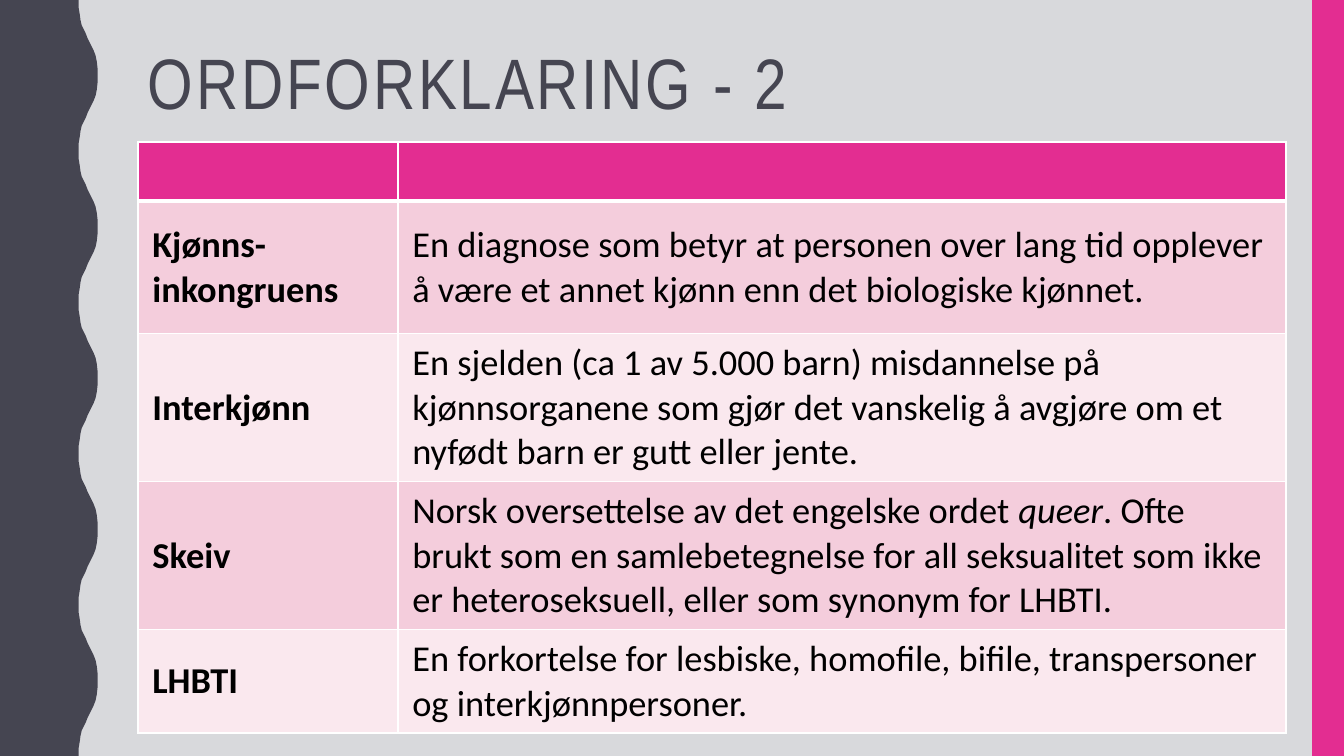
from dataclasses import dataclass

from lxml import etree
from pptx import Presentation, util as u
from pptx.dml.color import RGBColor
from pptx.enum import shapes, text
from pptx.oxml.ns import qn

WIDE, HIGH = 33.87, 19.05
DARK, PINK, GREY = "454551", "E32D91", "D8D9DC"
WHITE, BLACK = "FFFFFF", "000000"
BANDS = ("F4CDDC", "FAE8EE")
SIZE = 26
COLS = (6.55, 22.38)
ROWS = (1.27, 3.35, 3.35, 3.35, 2.34)

# Left half of one wave crest, in hundredths of a cm
RISE = [(198, 0), (198, 18), (201, 36), (203, 51), (206, 64), (211, 74),
        (216, 84), (221, 97), (226, 107), (231, 117), (236, 127),
        (241, 140), (244, 155), (246, 173)]
PERIOD, WAVES = 381, 5

CELL = {"vertical_anchor": text.MSO_ANCHOR.MIDDLE,
        "margin_left": u.Cm(0.36), "margin_right": u.Cm(0.36),
        "margin_top": u.Cm(0.18), "margin_bottom": u.Cm(0.18)}
FRAME = {"word_wrap": True, "vertical_anchor": text.MSO_ANCHOR.TOP}


@dataclass
class Term:
    name: str
    sense: tuple[str, ...]  # every second piece is italic


TERMS = [
    Term("Kjønns-inkongruens",
         ("En diagnose som betyr at personen over lang tid opplever å være "
          "et annet kjønn enn det biologiske kjønnet.",)),
    Term("Interkjønn",
         ("En sjelden (ca 1 av 5.000 barn) misdannelse på kjønnsorganene som "
          "gjør det vanskelig å avgjøre om et nyfødt barn er gutt eller "
          "jente.",)),
    Term("Skeiv",
         ("Norsk oversettelse av det engelske ordet ", "queer",
          ". Ofte brukt som en samlebetegnelse for all seksualitet som ikke "
          "er heteroseksuell, eller som synonym for LHBTI.")),
    Term("LHBTI",
         ("En forkortelse for lesbiske, homofile, bifile, transpersoner og "
          "interkjønnpersoner.",)),
]


def paint(fill, tone: str) -> None:
    fill.solid()
    fill.fore_color.rgb = RGBColor.from_string(tone)


def apply(item, form: dict) -> None:
    for key, value in form.items():
        setattr(item, key, value)


def write(par, words: str, tone: str, **form):
    run = par.add_run()
    run.text = words
    apply(run.font, form)
    run.font.color.rgb = RGBColor.from_string(tone)
    return run


def finish(shape, tone: str) -> None:
    shape.shadow.inherit = False
    paint(shape.fill, tone)
    shape.line.fill.background()


def border(cell, top: int, base: int) -> None:
    props = cell._tc.get_or_add_tcPr()
    sides = {"lnL": 1, "lnR": 1, "lnT": top, "lnB": base}
    for spot, (side, width) in enumerate(sides.items()):
        line = etree.Element(qn(f"a:{side}"), w=str(u.Pt(width)))
        fill = etree.SubElement(line, qn("a:solidFill"))
        etree.SubElement(fill, qn("a:srgbClr"), val=WHITE)
        props.insert(spot, line)


def draw_sides(slide) -> None:
    # Wavy band on the left
    fall = [(x, PERIOD - y) for x, y in reversed(RISE[1:])]
    crest = RISE + [(246, 190)] + fall
    edge = [(x, y + PERIOD * n) for n in range(WAVES) for x, y in crest]
    end = PERIOD * WAVES
    pen = slide.shapes.build_freeform(0, 0, scale=u.Cm(0.01))
    pen.add_line_segments(edge + [(RISE[0][0], end), (0, end)], close=True)
    finish(pen.convert_to_shape(), DARK)

    # Straight band on the right
    bar = slide.shapes.add_shape(shapes.MSO_SHAPE.RECTANGLE, u.Cm(33.07), 0,
                                 u.Cm(0.8), u.Cm(HIGH))
    finish(bar, PINK)


def draw_table(slide) -> None:
    frame = slide.shapes.add_table(
        len(ROWS), len(COLS), u.Cm(3.48), u.Cm(3.58),
        u.Cm(sum(COLS)), u.Cm(sum(ROWS)))
    table = frame.table
    for col, width in zip(table.columns, COLS):
        col.width = u.Cm(width)
    for row, height in zip(table.rows, ROWS):
        row.height = u.Cm(height)

    # Cell looks
    for r, row in enumerate(table.rows):
        for cell in row.cells:
            apply(cell, CELL)
            paint(cell.fill, BANDS[(r - 1) % 2] if r else PINK)
            border(cell, 3 if r == 1 else 1, 1 if r else 3)

    # Empty header cells keep the body text size
    for cell in table.rows[0].cells:
        par = cell.text_frame.paragraphs[0]
        etree.SubElement(par._p, qn("a:endParaRPr"), sz=str(SIZE * 100))

    # Terms and meanings
    font = {"name": "Calibri", "size": u.Pt(SIZE)}
    for r, term in enumerate(TERMS, 1):
        head, body = (table.cell(r, c).text_frame.paragraphs[0]
                      for c in range(2))
        write(head, term.name, BLACK, bold=True, **font)
        for n, piece in enumerate(term.sense):
            write(body, piece, BLACK, bold=False, italic=n % 2 == 1, **font)


def draw_title(slide) -> None:
    box = slide.shapes.add_textbox(u.Cm(3.48), u.Cm(1.07),
                                   u.Cm(28.27), u.Cm(3))
    apply(box.text_frame, FRAME)
    par = box.text_frame.paragraphs[0]
    par.line_spacing = 0.9
    run = write(par, "ORDFORKLARING - 2", DARK,
                name="Arial Narrow", size=u.Pt(51))
    run._r.get_or_add_rPr().set("spc", "200")


def main() -> None:
    deck = Presentation()
    deck.slide_width, deck.slide_height = u.Cm(WIDE), u.Cm(HIGH)
    slide = deck.slides.add_slide(deck.slide_layouts[6])
    paint(slide.background.fill, GREY)
    draw_sides(slide)
    draw_table(slide)
    draw_title(slide)
    deck.save("out.pptx")


if __name__ == "__main__":
    main()
